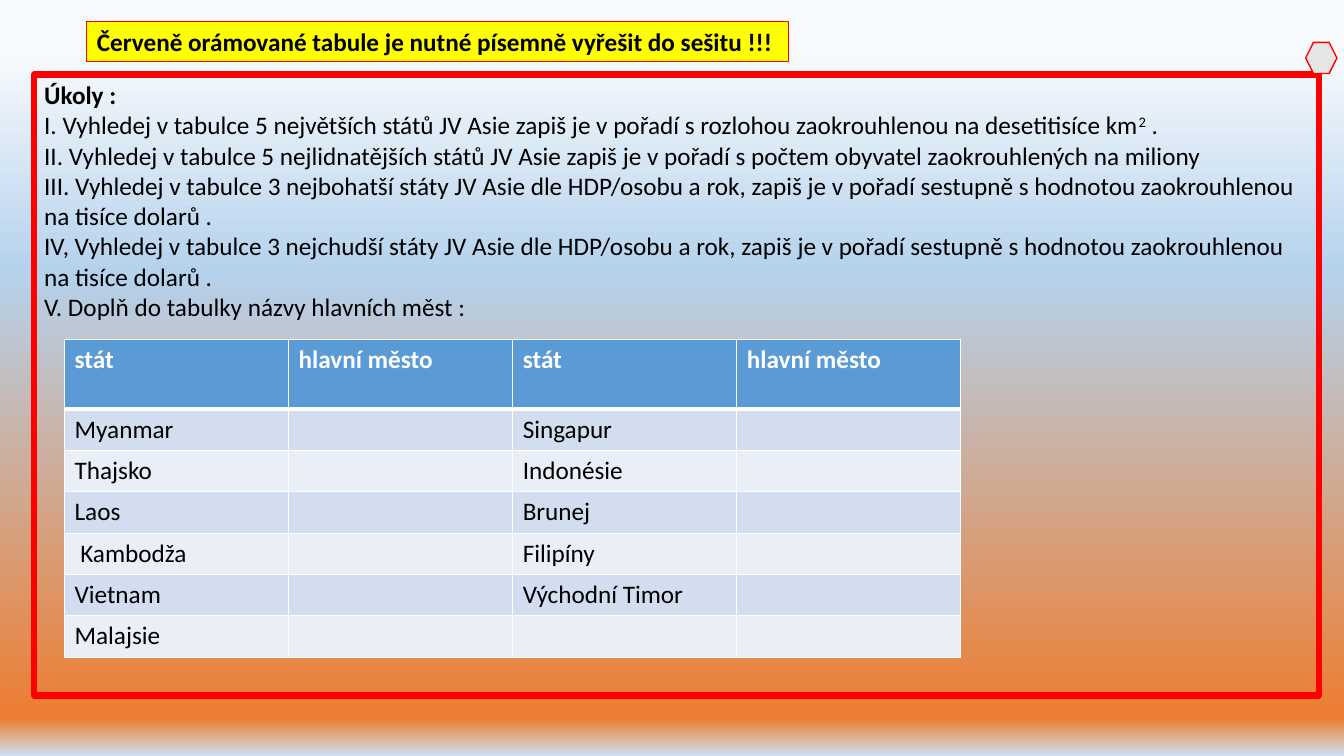
"""Builds the slide of tasks about the countries of Southeast Asia."""
import lxml.etree
import pptx
import pptx.dml.color
import pptx.enum.shapes
import pptx.enum.text
import pptx.oxml.ns
import pptx.util
from pptx.util import Inches

FONT = "Calibri"
BLACK, WHITE, RED = "000000", "FFFFFF", "FF0000"
HEADER_FILL, BAND_FILLS = "5B9BD5", ("D2DEEF", "EAEFF7")
BACKGROUND_STOPS = [(7, "F7FAFD"), (36, "B5D2EC"), (95, "ED7D31"), (100, "CEE1F2")]
BANNER = "Červeně orámované tabule je nutné písemně vyřešit do sešitu !!!"
HEADING = "Úkoly :"
TASKS = [
    ["I. Vyhledej v tabulce 5 největších států JV Asie zapiš je v pořadí s rozlohou "
     "zaokrouhlenou na desetitisíce km", "2", " ."],
    ["II. Vyhledej v tabulce 5 nejlidnatějších států JV Asie zapiš je v pořadí s počtem "
     "obyvatel zaokrouhlených na miliony"],
    ["III. Vyhledej v tabulce 3 nejbohatší státy JV Asie dle HDP/osobu a rok, zapiš je "
     "v pořadí sestupně s hodnotou zaokrouhlenou na tisíce dolarů ."],
    ["IV, Vyhledej v tabulce 3 nejchudší státy JV Asie dle HDP/osobu a rok, zapiš je "
     "v pořadí sestupně s hodnotou zaokrouhlenou na tisíce dolarů ."],
    ["V. Doplň do tabulky názvy hlavních měst :"],
]
STATES = [
    ("stát", "hlavní město", "stát", "hlavní město"),
    ("Myanmar", "", "Singapur", ""),
    ("Thajsko", "", "Indonésie", ""),
    ("Laos", "", "Brunej", ""),
    (" Kambodža", "", "Filipíny", ""),
    ("Vietnam", "", "Východní Timor", ""),
    ("Malajsie", "", "", ""),
]


def color(value):
    """Return the colour for a hex string."""
    return pptx.dml.color.RGBColor.from_string(value)


def set_fill(fill, value):
    """Make a fill solid."""
    fill.solid()
    fill.fore_color.rgb = color(value)


def set_line(shape, value, width):
    """Outline a shape."""
    set_fill(shape.line.fill, value)
    shape.line.width = pptx.util.Pt(width)


def format_paragraph(paragraph, bold=False, text_color=BLACK):
    """Align a paragraph left and set its font."""
    paragraph.alignment = pptx.enum.text.PP_ALIGN.LEFT
    font = paragraph.font
    font.name, font.size, font.bold = FONT, pptx.util.Pt(18), bold
    font.color.rgb = color(text_color)


def set_background(slide):
    """Give the slide a vertical gradient."""
    fill = slide.background.fill
    fill.gradient()
    fill.gradient_angle = 270
    stops = slide.element.find(".//" + pptx.oxml.ns.qn("a:gsLst"))
    for stop in list(stops):
        stops.remove(stop)
    for position, value in BACKGROUND_STOPS:
        stop = lxml.etree.SubElement(stops, pptx.oxml.ns.qn("a:gs"), pos=str(position * 1000))
        lxml.etree.SubElement(stop, pptx.oxml.ns.qn("a:srgbClr"), val=value)


def format_banner(title):
    """Place and format the yellow banner title."""
    title.left, title.top = Inches(0.86), Inches(0.21)
    title.width, title.height = Inches(6.96), Inches(0.4)
    set_fill(title.fill, "FFFF00")
    set_line(title, RED, 0.75)
    frame = title.text_frame
    frame.text = BANNER
    frame.word_wrap = False
    frame.auto_size = pptx.enum.text.MSO_AUTO_SIZE.NONE
    frame.vertical_anchor = pptx.enum.text.MSO_ANCHOR.TOP
    format_paragraph(frame.paragraphs[0], bold=True)


def add_task_box(slide):
    """Add the red frame with the list of tasks."""
    box = slide.shapes.add_textbox(Inches(0.34), Inches(0.74), Inches(12.74), Inches(6.16))
    set_line(box, RED, 4.5)
    frame = box.text_frame
    frame.word_wrap = True
    frame.text = HEADING
    format_paragraph(frame.paragraphs[0], bold=True)
    for parts in TASKS:
        paragraph = frame.add_paragraph()
        format_paragraph(paragraph)
        for index, part in enumerate(parts):
            run = paragraph.add_run()
            run.text = part
            if index == 1:
                run._r.get_or_add_rPr().set("baseline", "30000")


def set_borders(cell, bottom_width):
    """Draw white borders around a table cell."""
    properties = cell._tc.get_or_add_tcPr()
    for side, width in (("L", 1), ("R", 1), ("T", 1), ("B", bottom_width)):
        line = lxml.etree.SubElement(
            properties, pptx.oxml.ns.qn("a:ln" + side), w=str(pptx.util.Pt(width)))
        fill = lxml.etree.SubElement(line, pptx.oxml.ns.qn("a:solidFill"))
        lxml.etree.SubElement(fill, pptx.oxml.ns.qn("a:srgbClr"), val=WHITE)


def add_state_table(slide):
    """Add the table of states and capitals."""
    table = slide.shapes.add_table(
        len(STATES), len(STATES[0]),
        Inches(0.64), Inches(3.37), Inches(8.89), Inches(3.13)).table
    for row_index, texts in enumerate(STATES):
        header = row_index == 0
        table.rows[row_index].height = Inches(0.69 if header else 0.41)
        for column_index, text in enumerate(texts):
            cell = table.cell(row_index, column_index)
            cell.text = text
            format_paragraph(
                cell.text_frame.paragraphs[0], header, WHITE if header else BLACK)
            set_borders(cell, 3 if header else 1)
            set_fill(cell.fill, HEADER_FILL if header else BAND_FILLS[(row_index - 1) % 2])


def add_hexagon(slide):
    """Add the small hexagon at the corner of the frame."""
    hexagon = slide.shapes.add_shape(
        pptx.enum.shapes.MSO_SHAPE.HEXAGON,
        Inches(12.95), Inches(0.42), Inches(0.31), Inches(0.31))
    hexagon.shadow.inherit = False
    set_fill(hexagon.fill, "E7E6E6")
    set_line(hexagon, RED, 1)


def main():
    """Build and save the presentation."""
    presentation = pptx.Presentation()
    presentation.slide_width, presentation.slide_height = Inches(13.33), Inches(7.5)
    slide = presentation.slides.add_slide(presentation.slide_layouts[5])
    set_background(slide)
    format_banner(slide.shapes.title)
    add_task_box(slide)
    add_state_table(slide)
    add_hexagon(slide)
    presentation.save("out.pptx")


if __name__ == "__main__":
    main()
